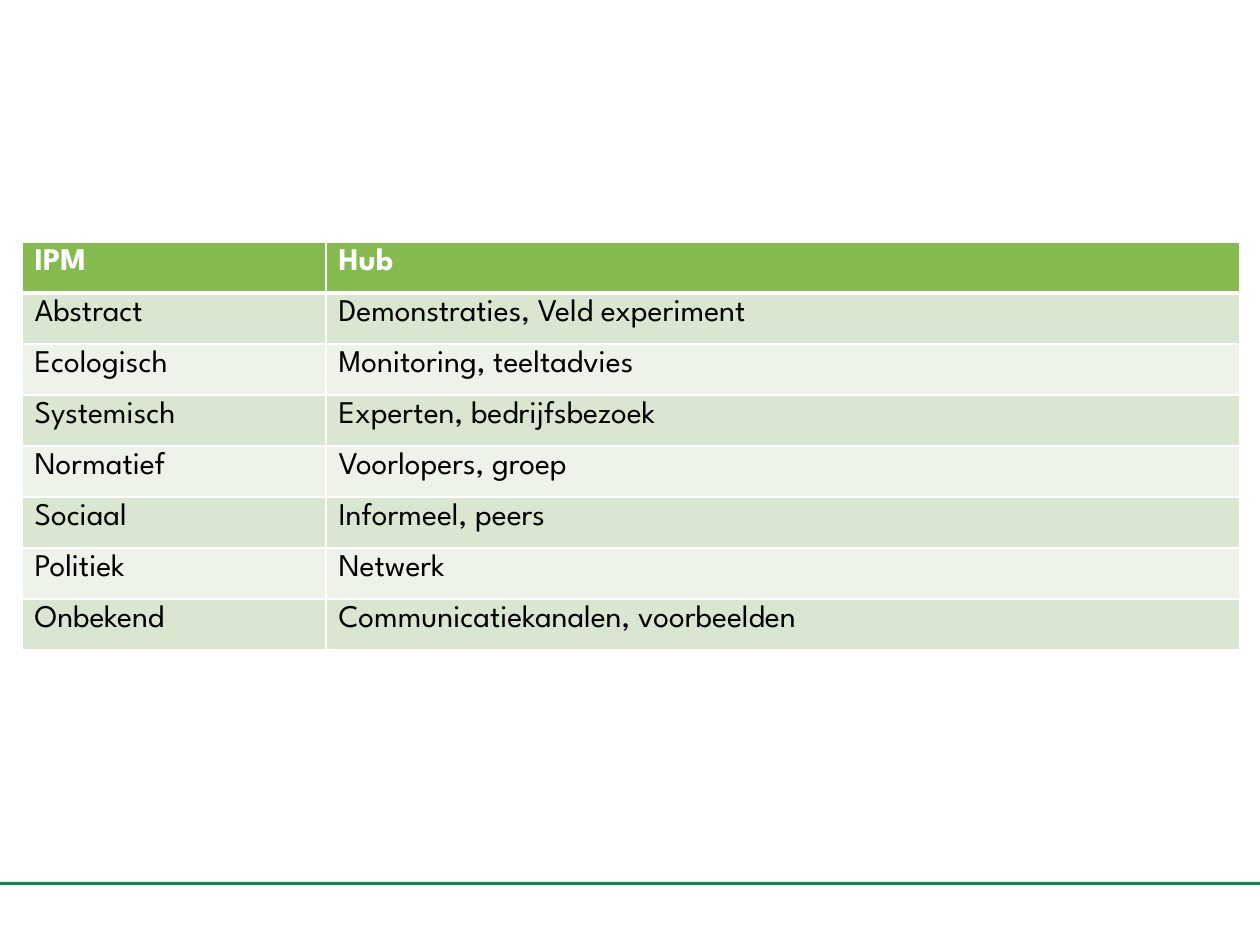
import pptx
import pptx.dml.color
import pptx.enum.shapes
import pptx.oxml.ns
import pptx.util
from lxml import etree

ROWS = [
    ("IPM", "Hub"),
    ("Abstract", "Demonstraties, Veld experiment"),
    ("Ecologisch", "Monitoring, teeltadvies"),
    ("Systemisch", "Experten, bedrijfsbezoek"),
    ("Normatief", "Voorlopers, groep"),
    ("Sociaal", "Informeel, peers"),
    ("Politiek", "Netwerk"),
    ("Onbekend", "Communicatiekanalen, voorbeelden"),
]


def px(n):
    return pptx.util.Emu(round(n * 914400 / 126))


def color(value):
    return pptx.dml.color.RGBColor.from_string(value)


class Deck:
    font = "League Spartan"
    size = 18
    white = "FFFFFF"
    black = "000000"
    line = "098A48"
    header = "85BB4E"
    bands = ("D9E7D0", "EDF3E9")

    def __init__(self, width, height):
        self.prs = pptx.Presentation()
        self.prs.slide_width = px(width)
        self.prs.slide_height = px(height)
        self.s = self.prs.slides.add_slide(self.prs.slide_layouts[6])

    def bar(self, x, y, w, h):
        sp = self.s.shapes.add_shape(
            pptx.enum.shapes.MSO_SHAPE.RECTANGLE, px(x), px(y), px(w), px(h))
        sp.shadow.inherit = False
        sp.fill.solid()
        sp.fill.fore_color.rgb = color(self.line)
        sp.line.fill.background()

    def borders(self, cell, **widths):
        tcPr = cell._tc.get_or_add_tcPr()
        qn = pptx.oxml.ns.qn
        for i, side in enumerate("LRTB"):
            ln = etree.Element(qn(f"a:ln{side}"))
            ln.set("w", str(pptx.util.Pt(widths.get(side, 1))))
            fill = etree.SubElement(ln, qn("a:solidFill"))
            etree.SubElement(fill, qn("a:srgbClr")).set("val", self.white)
            tcPr.insert(i, ln)

    def cell(self, cell, text, row):
        head = row == 0
        cell.fill.solid()
        cell.fill.fore_color.rgb = color(
            self.header if head else self.bands[(row - 1) % 2])
        self.borders(cell, T=3 if row == 1 else 1, B=3 if head else 1)
        cell.text_frame.text = text
        font = cell.text_frame.paragraphs[0].runs[0].font
        font.name = self.font
        font.size = pptx.util.Pt(self.size)
        font.bold = head
        font.color.rgb = color(self.white if head else self.black)

    def table(self, x, y, widths, row_height, rows):
        table = self.s.shapes.add_table(
            len(rows), len(widths), px(x), px(y),
            px(sum(widths)), px(row_height * len(rows))).table
        for column, width in zip(table.columns, widths):
            column.width = px(width)
        for i, texts in enumerate(rows):
            table.rows[i].height = px(row_height)
            for j, text in enumerate(texts):
                self.cell(table.cell(i, j), text, i)


def main():
    deck = Deck(1260, 945)
    deck.bar(-4, 882, 1264, 3)
    deck.table(22, 242, (304, 914), 51, ROWS)
    deck.prs.save("out.pptx")


if __name__ == "__main__":
    main()
